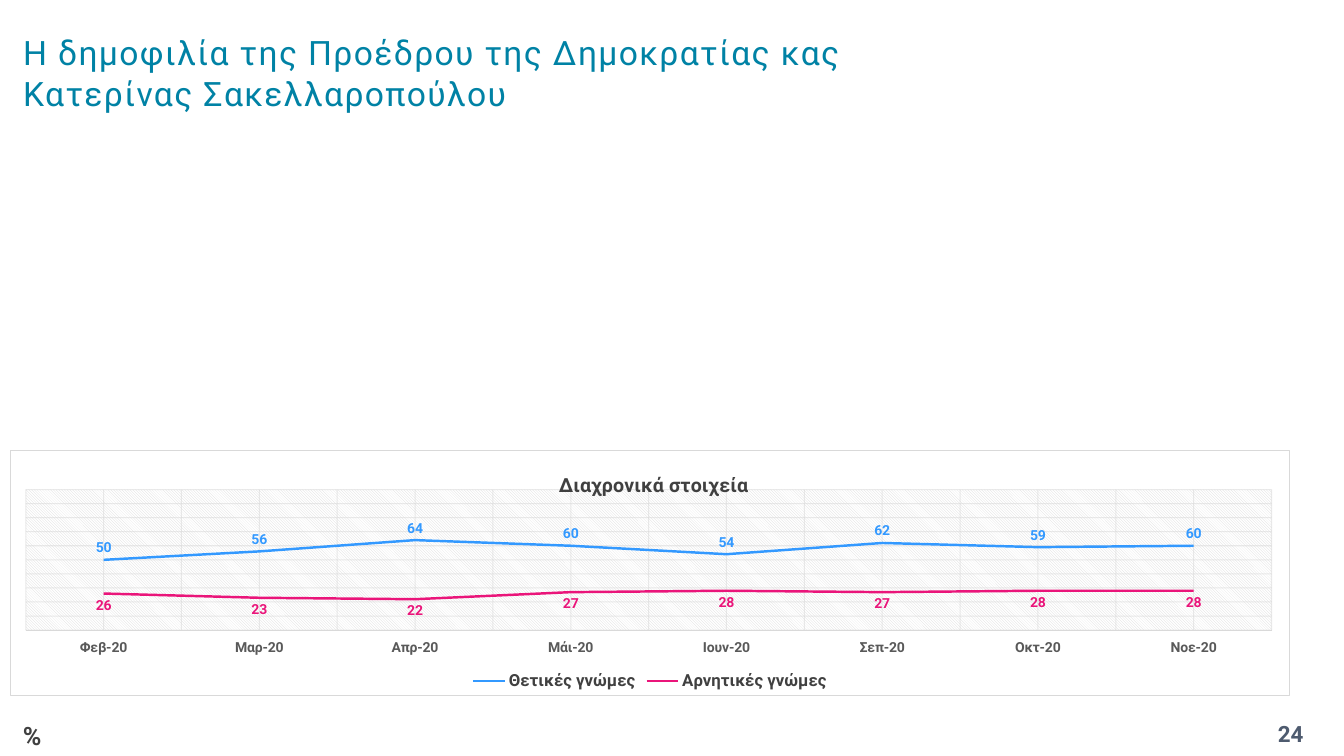
from lxml.etree import SubElement
from pptx import Presentation
from pptx.chart.data import CategoryChartData as ChartData
from pptx.dml.color import RGBColor
from pptx.enum.chart import XL_CHART_TYPE as ChartType
from pptx.enum.chart import XL_LABEL_POSITION as LabelPosition
from pptx.enum.chart import XL_LEGEND_POSITION as LegendPosition
from pptx.enum.chart import XL_TICK_LABEL_POSITION as TickLabels
from pptx.enum.chart import XL_TICK_MARK as TickMark
from pptx.enum.text import MSO_ANCHOR as Anchor
from pptx.enum.text import PP_ALIGN as Align
from pptx.oxml import parse_xml
from pptx.oxml.ns import nsdecls, qn
from pptx.util import Cm, Pt

FONT = "Roboto"
COLORS = {
    "title": "0082A5", "number": "4E5B6F", "dark": "404040", "axis": "595959",
    "grid": "D9D9D9", "white": "FFFFFF", "black": "000000",
    "positive": "3399FF", "negative": "EA157A",
}
MONTHS = ["Φεβ-20", "Μαρ-20", "Απρ-20", "Μάι-20",
          "Ιουν-20", "Σεπ-20", "Οκτ-20", "Νοε-20"]
OPINIONS = [
    ("Θετικές γνώμες", [50, 56, 64, 60, 54, 62, 59, 60],
     "positive", LabelPosition.ABOVE),
    ("Αρνητικές γνώμες", [26, 23, 22, 27, 28, 27, 28, 28],
     "negative", LabelPosition.BELOW),
]


def rgb(name):
    return RGBColor.from_string(COLORS[name])


def style_font(font, size, color, bold=False):
    font.name, font.size, font.bold = FONT, Pt(size), bold
    font.color.rgb = rgb(color)


def style_line(line, color, width, alpha=None):
    line.color.rgb = rgb(color)
    line.width = Pt(width)
    if alpha:
        for tint in line.fill._xPr.iter(qn("a:srgbClr")):
            SubElement(tint, qn("a:alpha")).set("val", str(alpha * 1000))


def write(frame, text, size=16, color="dark", bold=False,
          align=Align.LEFT, anchor=Anchor.TOP, spacing=None):
    frame.word_wrap = True
    frame.vertical_anchor = anchor
    para = frame.paragraphs[0]
    para.alignment = align
    span = para.add_run()
    span.text = text
    style_font(span.font, size, color, bold)
    if spacing:
        span.font._element.set("spc", str(spacing * 100))


def add_label(page, left, width, text, **style):
    box = page.shapes.add_textbox(left, Cm(18.03), width, Cm(1.02))
    write(box.text_frame, text, bold=True, **style)


def manual_layout(target, **values):
    """Return a chart layout with fractions of the chart area."""
    names = ["xMode", "yMode"] + list(values)
    items = {"xMode": "edge", "yMode": "edge", **values}
    body = "".join(f'<c:{name} val="{items[name]}"/>' for name in names)
    inner = '<c:layoutTarget val="inner"/>' if target == "inner" else ""
    return parse_xml(f'<c:layout {nsdecls("c")}><c:manualLayout>{inner}{body}'
                     '</c:manualLayout></c:layout>')


def replace_layout(parent, layout, index):
    for old in parent.findall(qn("c:layout")):
        parent.remove(old)
    parent.insert(index, layout)


def area_format(fill, line):
    return parse_xml(f'<c:spPr {nsdecls("c", "a")}>{fill}{line}</c:spPr>')


def solid(color):
    return f'<a:solidFill><a:srgbClr val="{COLORS[color]}"/></a:solidFill>'


def format_areas(chart):
    # Chart background and border
    border = f'<a:ln w="{Pt(0.75)}">{solid("grid")}</a:ln>'
    body = chart.element.find(qn("c:chart"))
    body.addnext(area_format(solid("white"), border))

    # Hatched plot area
    plot_area = body.find(qn("c:plotArea"))
    hatch = ('<a:pattFill prst="ltDnDiag">'
             f'<a:fgClr><a:srgbClr val="{COLORS["grid"]}"/></a:fgClr>'
             f'<a:bgClr><a:srgbClr val="{COLORS["white"]}"/></a:bgClr>'
             '</a:pattFill>')
    plot_area.append(area_format(hatch, "<a:ln><a:noFill/></a:ln>"))
    replace_layout(plot_area, manual_layout(
        "inner", x=0.012, y=0.161, w=0.974, h=0.574), 0)


def format_axes(chart):
    months, values = chart.category_axis, chart.value_axis
    months.has_major_gridlines = months.has_minor_gridlines = True
    months.major_tick_mark = months.minor_tick_mark = TickMark.NONE
    months.tick_label_position = TickLabels.LOW
    style_font(months.tick_labels.font, 10, "axis", True)
    style_line(months.format.line, "grid", 0.75)

    values.minimum_scale, values.maximum_scale = 0, 100
    values.major_unit = 10
    values.has_major_gridlines = True
    values.visible = False
    for grid in (months.major_gridlines, values.major_gridlines):
        style_line(grid.format.line, "grid", 0.75, alpha=54)
    # Minor month gridlines share the look of the major ones
    for minor in chart.element.iter(qn("c:minorGridlines")):
        line = f'<a:ln w="{Pt(0.75)}">{solid("grid")}</a:ln>'
        minor.append(area_format("", line))
        for tint in minor.iter(qn("a:srgbClr")):
            SubElement(tint, qn("a:alpha")).set("val", "54000")


def format_series(series, color, position):
    series.smooth = False
    style_line(series.format.line, color, 1.75)
    labels = series.data_labels
    labels.show_value = True
    labels.position = position
    style_font(labels.font, 10, color, True)


def add_trend_chart(page):
    data = ChartData(number_format="0")
    data.categories = MONTHS
    for name, values, _, _ in OPINIONS:
        data.add_series(name, values)
    chart = page.shapes.add_chart(ChartType.LINE, Cm(0.25), Cm(11.33),
                                  Cm(32.26), Cm(6.2), data).chart
    style_font(chart.font, 10, "black")
    chart.plots[0].vary_by_categories = False

    # Title
    chart.has_title = True
    write(chart.chart_title.text_frame, "Διαχρονικά στοιχεία",
          size=14, bold=True, align=Align.CENTER)
    replace_layout(chart.chart_title.element,
                   manual_layout("title", x=0.426, y=0.07), 1)

    # Legend
    chart.has_legend = True
    chart.legend.position = LegendPosition.BOTTOM
    chart.legend.include_in_layout = False
    style_font(chart.legend.font, 12, "dark", True)

    format_axes(chart)
    format_areas(chart)
    for series, (_, _, color, position) in zip(chart.plots[0].series, OPINIONS):
        format_series(series, color, position)


def main():
    deck = Presentation()
    deck.slide_width, deck.slide_height = Cm(33.87), Cm(19.05)
    page = deck.slides.add_slide(deck.slide_layouts[5])

    # Heading
    title = page.shapes.title
    title.left, title.top = Cm(0.33), Cm(0.33)
    title.width, title.height = Cm(24.94), Cm(3)
    write(title.text_frame,
          "Η δημοφιλία της Προέδρου της Δημοκρατίας κας "
          "Κατερίνας Σακελλαροπούλου",
          size=24, color="title", anchor=Anchor.MIDDLE, spacing=1)

    add_trend_chart(page)

    # Footer
    add_label(page, Cm(0.33), Cm(1.8), "%", size=18)
    add_label(page, Cm(31.19), Cm(2.67), "24", color="number",
              align=Align.CENTER)
    deck.save("out.pptx")


if __name__ == "__main__":
    main()
